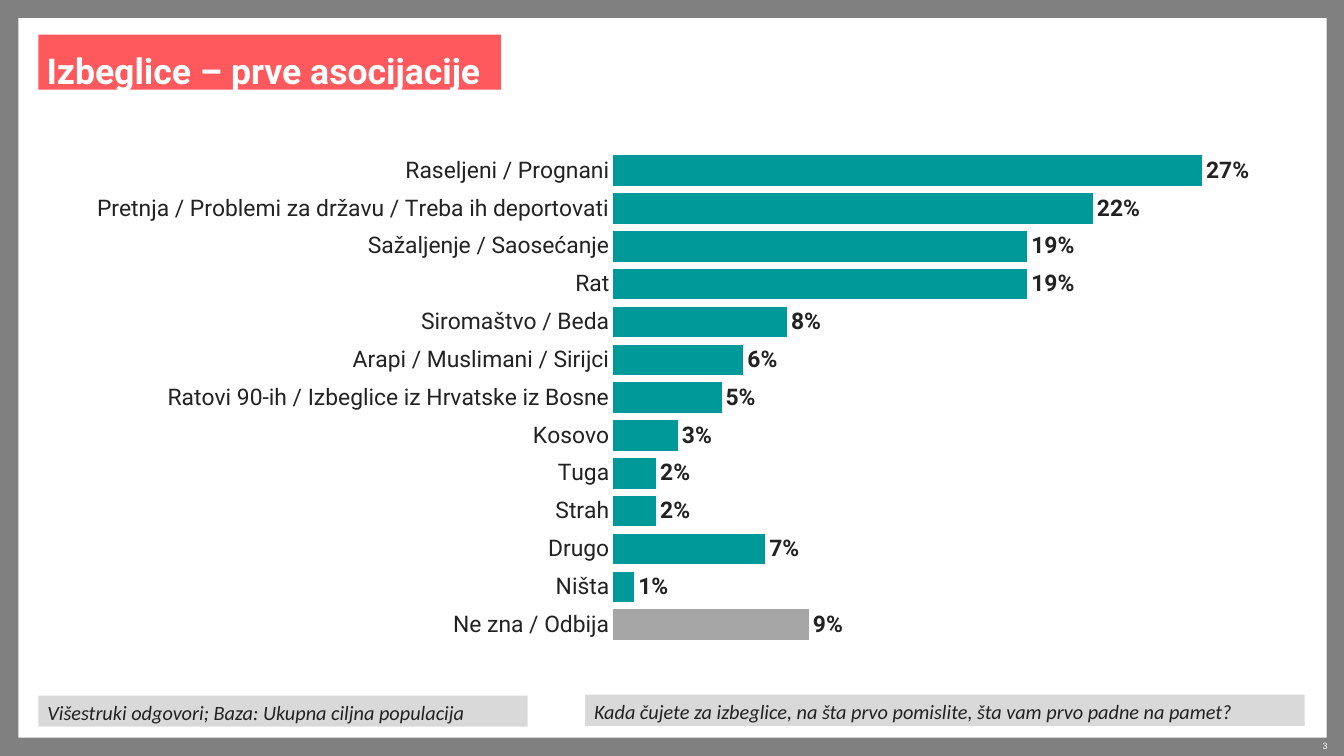
"""Build a slide with a bar chart of first associations with refugees."""
from pptx import Presentation
from pptx.chart.data import CategoryChartData
from pptx.dml.color import RGBColor
from pptx.enum.chart import XL_CHART_TYPE, XL_LABEL_POSITION, XL_TICK_MARK
from pptx.enum.shapes import MSO_SHAPE
from pptx.enum.text import MSO_ANCHOR, PP_ALIGN
from pptx.oxml import parse_xml
from pptx.oxml.ns import nsdecls
from pptx.util import Pt

BAR_CLUSTERED = XL_CHART_TYPE.BAR_CLUSTERED
OUTSIDE_END = XL_LABEL_POSITION.OUTSIDE_END
NO_TICK = XL_TICK_MARK.NONE
RECTANGLE = MSO_SHAPE.RECTANGLE
MIDDLE = MSO_ANCHOR.MIDDLE
LEFT, RIGHT = PP_ALIGN.LEFT, PP_ALIGN.RIGHT

GREY = RGBColor(0x80, 0x80, 0x80)
WHITE = RGBColor(0xFF, 0xFF, 0xFF)
CORAL = RGBColor(0xFF, 0x58, 0x5D)
LIGHT_GREY = RGBColor(0xD9, 0xD9, 0xD9)
INK = RGBColor(0x22, 0x22, 0x23)
TEAL = RGBColor(0x00, 0x99, 0x99)
MID_GREY = RGBColor(0xA6, 0xA6, 0xA6)

PLOT_AREA = {"x": 0.45, "y": 0.035, "w": 0.55, "h": 0.934}
ASSOCIATIONS = [
    ("Raseljeni / Prognani", 27),
    ("Pretnja / Problemi za državu / Treba ih deportovati", 22),
    ("Sažaljenje / Saosećanje", 19),
    ("Rat", 19),
    ("Siromaštvo / Beda", 8),
    ("Arapi / Muslimani / Sirijci", 6),
    ("Ratovi 90-ih / Izbeglice iz Hrvatske iz Bosne", 5),
    ("Kosovo", 3),
    ("Tuga", 2),
    ("Strah", 2),
    ("Drugo", 7),
    ("Ništa", 1),
    ("Ne zna / Odbija", 9),
]


def add_panel(slide, left, top, width, height, color):
    """Add a plain filled rectangle."""
    shape = slide.shapes.add_shape(RECTANGLE, Pt(left), Pt(top), Pt(width), Pt(height))
    shape.shadow.inherit = False
    shape.fill.solid()
    shape.fill.fore_color.rgb = color
    shape.line.fill.background()
    return shape


def set_text(shape, text, font_name, size, color, margins, alignment=LEFT):
    """Write one paragraph into a shape and return it."""
    frame = shape.text_frame
    frame.margin_left, frame.margin_top, frame.margin_right, frame.margin_bottom = map(Pt, margins)
    frame.vertical_anchor = MIDDLE
    frame.word_wrap = True
    paragraph = frame.paragraphs[0]
    paragraph.text = text
    paragraph.alignment = alignment
    paragraph.font.name = font_name
    paragraph.font.size = Pt(size)
    paragraph.font.color.rgb = color
    return paragraph


def add_title(slide, text):
    """Add the coral title banner."""
    banner = add_panel(slide, 30.24, 27.36, 364.32, 43.2, CORAL)
    paragraph = set_text(banner, text, "Roboto", 28, WHITE, (6.5, 5.8, 6.5, 0))
    banner.text_frame.word_wrap = False
    paragraph.line_spacing = Pt(41)
    paragraph.font.bold = True


def add_note(slide, left, top, width, text):
    """Add a grey note bar with italic text."""
    bar = add_panel(slide, left, top, width, 24.48, LIGHT_GREY)
    paragraph = set_text(bar, text, "Calibri", 16, INK, (7.2, 0, 7.2, 0))
    paragraph.line_spacing = 1.1
    paragraph.space_before = paragraph.space_after = Pt(6)
    paragraph.font.italic = True


def add_page_number(slide, number):
    """Add the page number in the lower right corner."""
    box = slide.shapes.add_textbox(Pt(988.56), Pt(583.2), Pt(56.88), Pt(9.36))
    set_text(box, number, "Roboto", 7, WHITE, (0, 0, 0, 0), RIGHT)


def set_plot_area(chart):
    """Fix the inner plot area as fractions of the chart."""
    modes = '<c:layoutTarget val="inner"/><c:xMode val="edge"/><c:yMode val="edge"/>'
    sizes = "".join(f'<c:{key} val="{value}"/>' for key, value in PLOT_AREA.items())
    layout = parse_xml(
        f'<c:layout {nsdecls("c")}><c:manualLayout>{modes}{sizes}</c:manualLayout></c:layout>'
    )
    plot_area = chart.element.xpath("//c:plotArea")[0]
    for old_layout in plot_area.xpath("./c:layout"):
        plot_area.remove(old_layout)
    plot_area.insert(0, layout)


def style_axes(chart):
    """Hide the value axis and list categories from the top."""
    category_axis, value_axis = chart.category_axis, chart.value_axis
    category_axis.reverse_order = True
    category_axis.has_major_gridlines = False
    category_axis.major_tick_mark = NO_TICK
    category_axis.format.line.fill.background()
    value_axis.minimum_scale, value_axis.maximum_scale = 0, 30
    value_axis.has_major_gridlines = False
    value_axis.visible = False


def style_bars(chart):
    """Colour the bars and label them with percentages."""
    plot = chart.plots[0]
    plot.gap_width = 20
    plot.vary_by_categories = False
    series = plot.series[0]
    no_answer = series.points[len(ASSOCIATIONS) - 1]
    for item, color in ((series, TEAL), (no_answer, MID_GREY)):
        item.format.fill.solid()
        item.format.fill.fore_color.rgb = color
        item.format.line.color.rgb = WHITE
        item.format.line.width = Pt(0.75)
    labels = series.data_labels
    labels.show_value = True
    labels.position = OUTSIDE_END
    labels.number_format = '#"%"'
    labels.number_format_is_linked = False
    labels.font.name = "Roboto"
    labels.font.size = Pt(18)
    labels.font.bold = True
    labels.font.color.rgb = INK


def add_association_chart(slide):
    """Add the bar chart of associations."""
    names, shares = zip(*ASSOCIATIONS)
    data = CategoryChartData()
    data.categories = names
    data.add_series("Series 1", shares)
    chart = slide.shapes.add_chart(
        BAR_CLUSTERED, Pt(60.48), Pt(105.12), Pt(938.16), Pt(414.72), data
    ).chart
    chart.has_legend = False
    chart.has_title = False
    chart.font.name = "Roboto"
    chart.font.size = Pt(18)
    chart.font.color.rgb = INK
    set_plot_area(chart)
    style_axes(chart)
    style_bars(chart)


def main():
    """Build and save the presentation."""
    presentation = Presentation()
    presentation.slide_width, presentation.slide_height = Pt(1058.4), Pt(595.44)
    slide = presentation.slides.add_slide(presentation.slide_layouts[6])
    slide.background.fill.solid()
    slide.background.fill.fore_color.rgb = GREY
    add_panel(slide, 14.4, 14.4, 1030.32, 566.64, WHITE)
    add_page_number(slide, "3")
    add_title(slide, "Izbeglice – prve asocijacije")
    add_note(slide, 30.24, 547.92, 385.2, "Višestruki odgovori; Baza: Ukupna ciljna populacija")
    add_note(
        slide, 460.8, 547.2, 566.64,
        "Kada čujete za izbeglice, na šta prvo pomislite, šta vam prvo padne na pamet?",
    )
    add_association_chart(slide)
    presentation.save("out.pptx")


if __name__ == "__main__":
    main()
